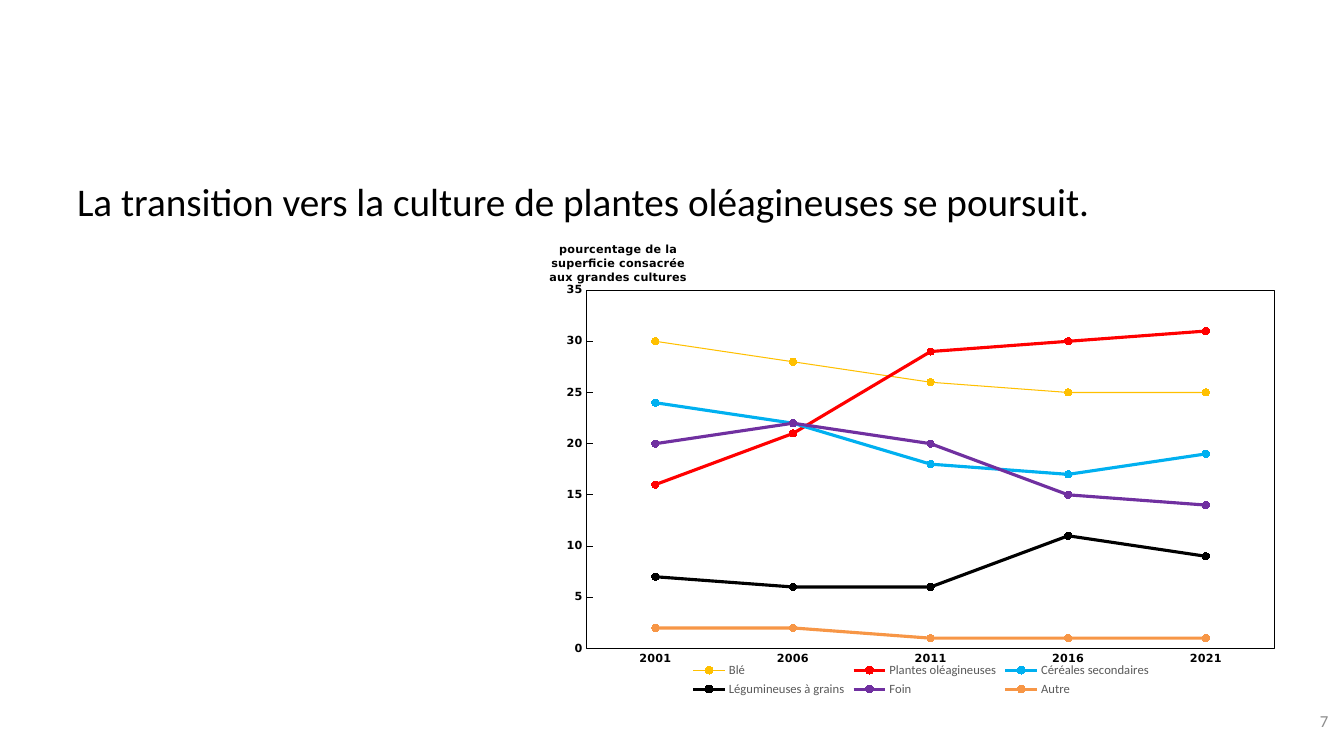
"""Builds a slide with a line chart of field crop shares by census year."""
from pptx import Presentation
from pptx.chart.data import CategoryChartData
from pptx.dml.color import RGBColor
from pptx.enum.chart import XL_CHART_TYPE, XL_LEGEND_POSITION, XL_MARKER_STYLE, XL_TICK_MARK
from pptx.enum.text import MSO_ANCHOR, PP_ALIGN
from pptx.oxml import parse_xml
from pptx.oxml.ns import nsdecls, qn
from pptx.util import Pt

LINE_MARKERS = XL_CHART_TYPE.LINE_MARKERS
BOTTOM = XL_LEGEND_POSITION.BOTTOM
CIRCLE = XL_MARKER_STYLE.CIRCLE
TICK_NONE, TICK_INSIDE = XL_TICK_MARK.NONE, XL_TICK_MARK.INSIDE
MIDDLE = MSO_ANCHOR.MIDDLE
LEFT, RIGHT = PP_ALIGN.LEFT, PP_ALIGN.RIGHT

BLACK = RGBColor(0x00, 0x00, 0x00)
GREY = RGBColor(0x8C, 0x8C, 0x8C)
DARK_GREY = RGBColor(0x59, 0x59, 0x59)
GOLD = RGBColor(0xFF, 0xC0, 0x00)
RED = RGBColor(0xFF, 0x00, 0x00)
BLUE = RGBColor(0x00, 0xB0, 0xF0)
PURPLE = RGBColor(0x70, 0x30, 0xA0)
ORANGE = RGBColor(0xF7, 0x96, 0x46)

YEARS = ["2001", "2006", "2011", "2016", "2021"]
CROPS = [
    ("Blé", [30, 28, 26, 25, 25], GOLD, 0.75),
    ("Plantes oléagineuses", [16, 21, 29, 30, 31], RED, 2.25),
    ("Céréales secondaires", [24, 22, 18, 17, 19], BLUE, 2.25),
    ("Légumineuses à grains", [7, 6, 6, 11, 9], BLACK, 2.25),
    ("Foin", [20, 22, 20, 15, 14], PURPLE, 2.25),
    ("Autre", [2, 2, 1, 1, 1], ORANGE, 2.25),
]


def add_text(text, x, y, w, h, size=12, color=BLACK, align=LEFT):
    tf = s.shapes.add_textbox(Pt(x), Pt(y), Pt(w), Pt(h)).text_frame
    tf.word_wrap = True
    tf.vertical_anchor = MIDDLE
    p = tf.paragraphs[0]
    p.alignment = align
    r = p.add_run()
    r.text = text
    r.font.name, r.font.size, r.font.color.rgb = "Calibri", Pt(size), color


def set_layout(part, index, target="", **place):
    for old in part.findall(qn("c:layout")):
        part.remove(old)
    inner = f'<c:layoutTarget val="{target}"/>' if target else ""
    inner += "".join(f'<c:{k}Mode val="edge"/>' for k in "xy")
    inner += "".join(f'<c:{k} val="{v}"/>' for k, v in place.items())
    part.insert(index, parse_xml(
        f'<c:layout {nsdecls("c")}><c:manualLayout>{inner}</c:manualLayout></c:layout>'))


prs = Presentation()
prs.slide_width, prs.slide_height = Pt(960), Pt(540)
s = prs.slides.add_slide(prs.slide_layouts[6])

add_text("La transition vers la culture de plantes oléagineuses se poursuit.",
         48, 119.5, 864, 48, size=28)
add_text("7", 732, 500.5, 224, 29, color=GREY, align=RIGHT)

data = CategoryChartData(number_format="#,##0")
data.categories = YEARS
for name, values, color, width in CROPS:
    data.add_series(name, values)
chart = s.shapes.add_chart(
    LINE_MARKERS, Pt(391), Pt(168), Pt(528.5), Pt(332.5), data).chart
chart.has_title = False
chart.font.name, chart.font.size, chart.font.color.rgb = "Calibri", Pt(10), BLACK

for series, (name, values, color, width) in zip(chart.plots[0].series, CROPS):
    series.smooth = False
    series.format.line.color.rgb = color
    series.format.line.width = Pt(width)
    marker = series.marker
    marker.style, marker.size = CIRCLE, 5
    marker.format.fill.solid()
    marker.format.fill.fore_color.rgb = color
    marker.format.line.color.rgb = color

years, share = chart.category_axis, chart.value_axis
years.major_tick_mark = TICK_NONE
years.format.line.fill.background()
share.minimum_scale, share.maximum_scale, share.major_unit = 0, 35, 5
share.has_major_gridlines = False
share.major_tick_mark = TICK_INSIDE
share.format.line.color.rgb = BLACK
share.format.line.width = Pt(0.75)
share.tick_labels.number_format = "#,##0"
share.tick_labels.number_format_is_linked = False

r = share.axis_title.text_frame.paragraphs[0].add_run()
r.text = "pourcentage de la superficie consacrée aux grandes cultures"
for font in (years.tick_labels.font, share.tick_labels.font, r.font):
    font.name, font.size, font.bold = "DejaVu Sans", Pt(8), True
    font.color.rgb = BLACK

chart.has_legend = True
chart.legend.position = BOTTOM
chart.legend.include_in_layout = False
font = chart.legend.font
font.name, font.size, font.color.rgb = "Calibri", Pt(9), DARK_GREY

root = chart.element
plot_area = root.find(".//" + qn("c:plotArea"))
title = plot_area.find(".//" + qn("c:title"))
title.find(".//" + qn("a:bodyPr")).set("rot", "0")
set_layout(plot_area, 0, target="inner", x=0.053, y=0.118, w=0.93, h=0.77)
set_layout(title, 1, x=0, y=0.01)
set_layout(root.find(".//" + qn("c:legend")), 1, x=0.19, y=0.91, w=0.63, h=0.09)
plot_area.append(parse_xml(
    f'<c:spPr {nsdecls("c", "a")}><a:noFill/><a:ln w="9525"><a:solidFill>'
    f'<a:srgbClr val="{BLACK}"/></a:solidFill></a:ln></c:spPr>'))
root.find(qn("c:txPr")).addprevious(parse_xml(
    f'<c:spPr {nsdecls("c", "a")}><a:solidFill><a:srgbClr val="FFFFFF"/></a:solidFill>'
    '<a:ln><a:noFill/></a:ln></c:spPr>'))

prs.save("out.pptx")
